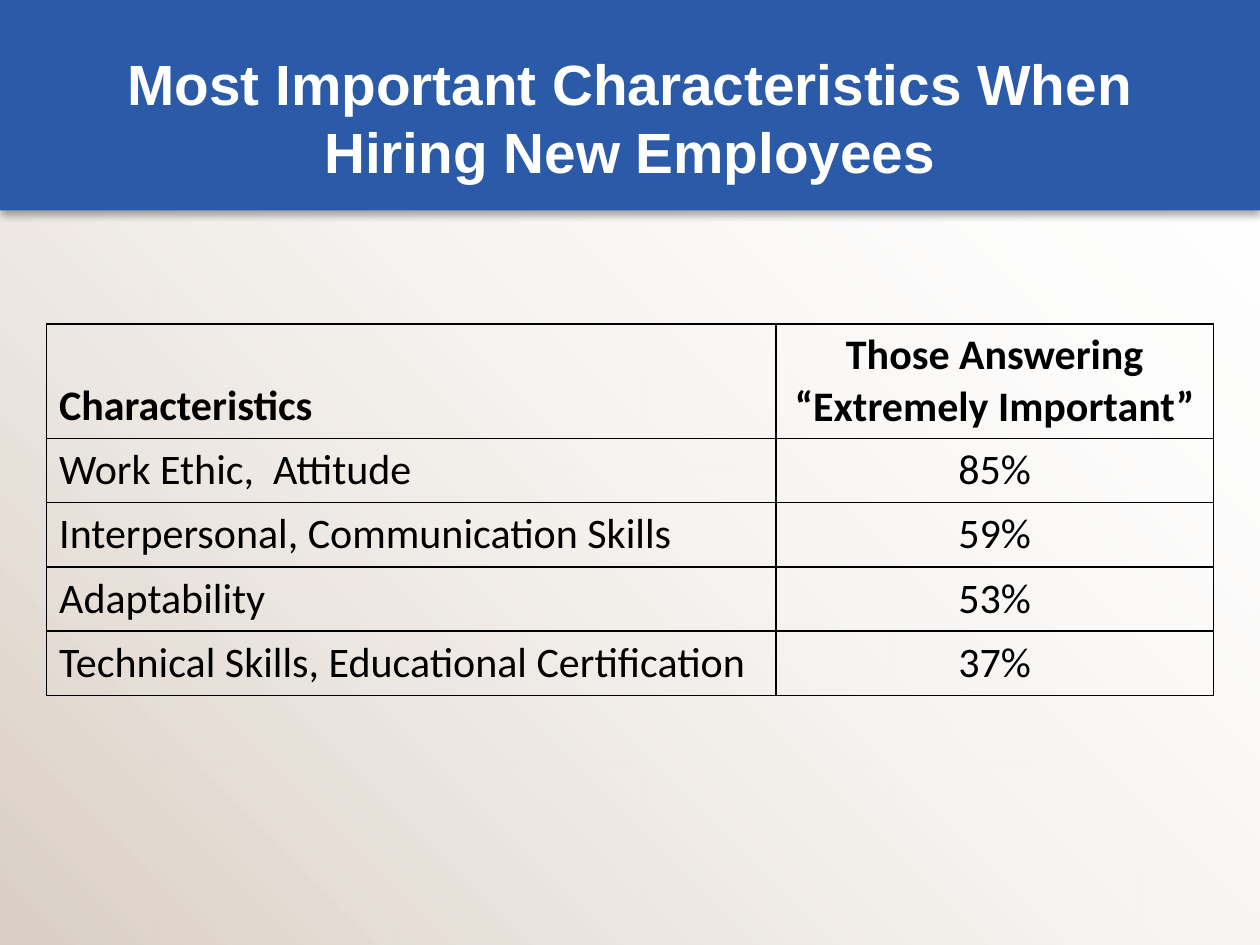
import pptx
import pptx.util
import pptx.oxml
import pptx.oxml.ns
import pptx.dml.color
import pptx.enum.shapes
import pptx.enum.text

Inches = pptx.util.Inches
Align = pptx.enum.text.PP_ALIGN
Anchor = pptx.enum.text.MSO_ANCHOR
NS = pptx.oxml.ns.nsdecls("a")

HUES = {"sand": "DACFC4", "white": "FFFFFF", "blue": "2B5AA9", "black": "000000"}

ROWS = [
    ("Characteristics", "Those Answering “Extremely Important”"),
    ("Work Ethic,  Attitude", "85%"),
    ("Interpersonal, Communication Skills", "59%"),
    ("Adaptability", "53%"),
    ("Technical Skills, Educational Certification", "37%"),
]


def hue(name):
    return pptx.dml.color.RGBColor.from_string(HUES[name])


def write(frame, text, font="Calibri", size=24, color="black", bold=False, align=Align.LEFT):
    para = frame.paragraphs[0]
    para.alignment = align
    run = para.add_run()
    run.text = text
    run.font.name = font
    run.font.size = pptx.util.Pt(size)
    run.font.bold = bold
    run.font.color.rgb = hue(color)


def add_rect(slide, height):
    """Add a full-width rectangle at the top, without line or shadow."""
    kind = pptx.enum.shapes.MSO_SHAPE.RECTANGLE
    rect = slide.shapes.add_shape(kind, 0, 0, Inches(10), Inches(height))
    rect.shadow.inherit = False
    rect.line.fill.background()
    return rect


def add_wash(slide):
    """Fill the slide with sand that fades out towards the top right."""
    fill = add_rect(slide, 7.5).fill
    fill.gradient()
    fill.gradient_angle = 45
    for stop, name in zip(fill.gradient_stops, ("sand", "white")):
        stop.color.rgb = hue(name)
    clear = pptx.oxml.parse_xml(f'<a:alpha {NS} val="0"/>')
    fill.gradient_stops[1]._gs[0].append(clear)


def add_band(slide):
    band = add_rect(slide, 1.67)
    band.fill.solid()
    band.fill.fore_color.rgb = hue("blue")
    effects = band._element.spPr.find(pptx.oxml.ns.qn("a:effectLst"))
    effects.append(pptx.oxml.parse_xml(
        f'<a:outerShdw {NS} blurRad="{pptx.util.Pt(4)}" dist="{pptx.util.Pt(2.2)}" '
        f'dir="5400000" rotWithShape="0"><a:srgbClr val="{HUES["black"]}">'
        '<a:alpha val="32000"/></a:srgbClr></a:outerShdw>'))


def add_title(slide, text):
    box = slide.shapes.add_textbox(Inches(0.5), Inches(0.3), Inches(9), Inches(1.25))
    frame = box.text_frame
    frame.word_wrap = True
    frame.vertical_anchor = Anchor.MIDDLE
    frame.margin_left = frame.margin_right = Inches(0.05)
    frame.margin_top = frame.margin_bottom = Inches(0.05)
    write(frame, text, font="Arial", size=32.4, color="white", bold=True, align=Align.CENTER)


def add_edges(cell):
    props = cell._tc.get_or_add_tcPr()
    for side in "LRTB":
        props.append(pptx.oxml.parse_xml(
            f'<a:ln{side} {NS} w="{pptx.util.Pt(1)}"><a:solidFill>'
            f'<a:srgbClr val="{HUES["black"]}"/></a:solidFill></a:ln{side}>'))


def add_grid(slide):
    """Add the survey table, with a taller bold first row."""
    widths = (5.79, 3.47)
    heights = [0.91] + [0.51] * (len(ROWS) - 1)
    table = slide.shapes.add_table(
        len(ROWS), len(widths), Inches(0.37), Inches(2.57),
        Inches(sum(widths)), Inches(sum(heights))).table
    table.horz_banding = False
    for col, width in zip(table.columns, widths):
        col.width = Inches(width)
    for top, (row, height, texts) in enumerate(zip(table.rows, heights, ROWS)):
        row.height = Inches(height)
        for cell, text, align in zip(row.cells, texts, (Align.LEFT, Align.CENTER)):
            add_edges(cell)
            cell.fill.background()
            cell.vertical_anchor = Anchor.BOTTOM if top == 0 else Anchor.TOP
            write(cell.text_frame, text, bold=top == 0, align=align)


def main():
    deck = pptx.Presentation()
    deck.slide_width, deck.slide_height = Inches(10), Inches(7.5)
    slide = deck.slides.add_slide(deck.slide_layouts[6])
    add_wash(slide)
    add_band(slide)
    add_title(slide, "Most Important Characteristics When Hiring New Employees")
    add_grid(slide)
    deck.save("out.pptx")


if __name__ == "__main__":
    main()
